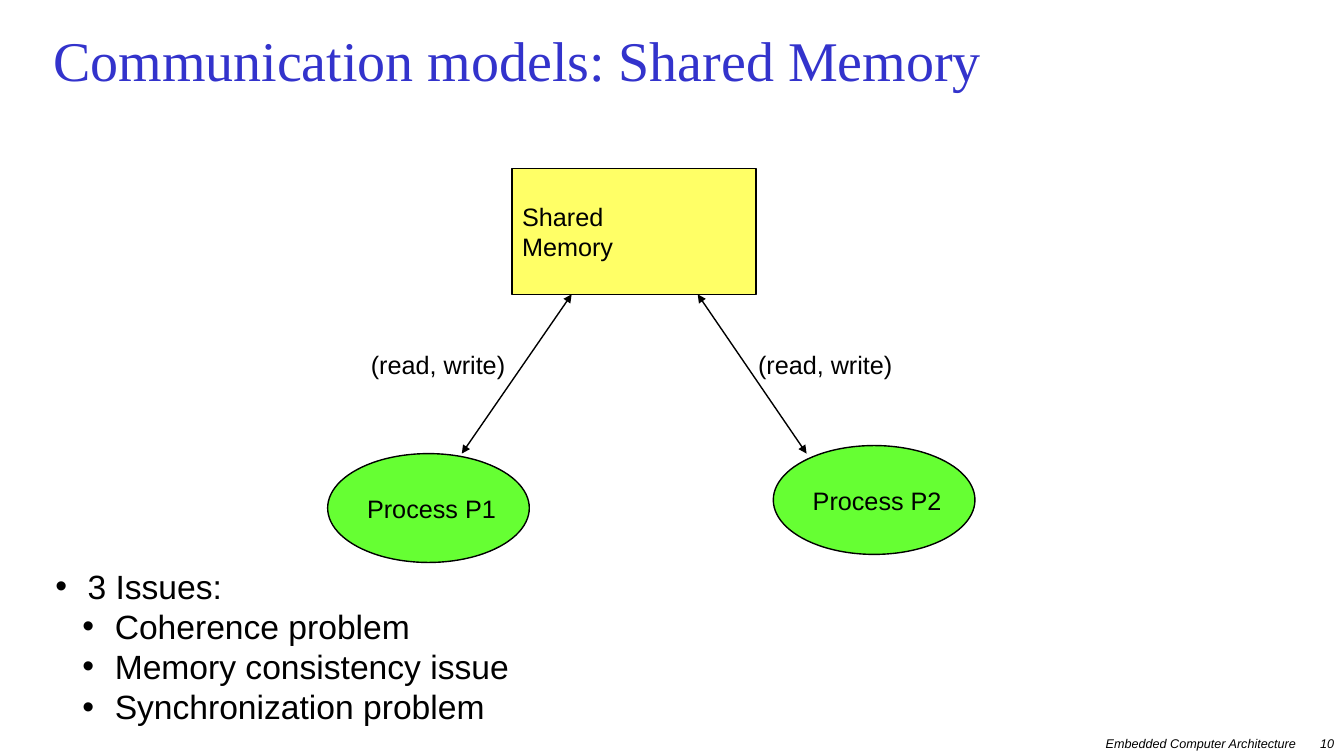
from pptx import Presentation
from pptx.dml.color import RGBColor
from pptx.enum.shapes import MSO_CONNECTOR, MSO_SHAPE
from pptx.enum.text import MSO_ANCHOR, PP_ALIGN
from pptx.oxml.ns import qn
from pptx.util import Inches, Pt
from lxml.etree import SubElement

BLACK = RGBColor(0x00, 0x00, 0x00)
TITLE_BLUE = RGBColor(0x33, 0x33, 0xCC)
PROCESS_GREEN = RGBColor(0x66, 0xFF, 0x33)
MEMORY_YELLOW = RGBColor(0xFF, 0xFF, 0x66)


def write_text(shape, lines, size=18, font="Arial", color=BLACK, italic=False,
               align=PP_ALIGN.LEFT, anchor=MSO_ANCHOR.TOP, wrap=False, spacing=None):
    """Fill a shape with one paragraph per line and return the paragraphs."""
    frame = shape.text_frame
    frame.word_wrap = wrap
    frame.vertical_anchor = anchor
    frame.text = "\n".join(lines)
    for paragraph in frame.paragraphs:
        paragraph.alignment = align
        paragraph.line_spacing = spacing
        paragraph.font.size = Pt(size)
        paragraph.font.name = font
        paragraph.font.color.rgb = color
        paragraph.font.italic = italic
    return frame.paragraphs


def add_text(slide, box, lines, **text_format):
    """Add a text box at (left, top, width, height) in inches."""
    shape = slide.shapes.add_textbox(*map(Inches, box))
    return write_text(shape, lines, **text_format)


def add_node(slide, kind, box, lines, fill):
    """Add an outlined, filled diagram node with its label."""
    shape = slide.shapes.add_shape(kind, *map(Inches, box))
    shape.shadow.inherit = False
    shape.fill.solid()
    shape.fill.fore_color.rgb = fill
    shape.line.color.rgb = BLACK
    shape.line.width = Pt(1)
    write_text(shape, lines, anchor=MSO_ANCHOR.MIDDLE)


def add_double_arrow(slide, start, end):
    """Draw a straight line with a triangle at both ends."""
    arrow = slide.shapes.add_connector(MSO_CONNECTOR.STRAIGHT, *map(Inches, start + end))
    arrow.line.color.rgb = BLACK
    arrow.line.width = Pt(1)
    line = arrow.line._get_or_add_ln()
    for tag in ("a:headEnd", "a:tailEnd"):
        SubElement(line, qn(tag), type="triangle")
    SubElement(arrow._element.spPr, qn("a:effectLst"))


def add_diagram(slide, left, top):
    """Draw the memory, both processes and the arrows between them."""
    add_node(slide, MSO_SHAPE.RECTANGLE, (left + 1.83, top, 2.42, 1.25),
             ["Shared", "Memory"], MEMORY_YELLOW)
    processes = [("Process P1", 0, 2.83, 1.33, 2.42, 0.33),
                 ("Process P2", 4.42, 2.75, 4.75, 3.67, 4.17)]
    for name, x, y, arrow_x, memory_x, label_x in processes:
        add_node(slide, MSO_SHAPE.OVAL, (left + x, top + y, 2, 1.08), [name], PROCESS_GREEN)
        add_double_arrow(slide, (left + arrow_x, top + 2.83), (left + memory_x, top + 1.25))
        add_text(slide, (left + label_x, top + 1.75, 1.6, 0.4), ["(read, write)"])


def add_issues(slide, box):
    """List the issues, the first line as the heading of the others."""
    lines = ["3 Issues:", "Coherence problem", "Memory consistency issue",
             "Synchronization problem"]
    for index, paragraph in enumerate(add_text(slide, box, lines, size=24)):
        paragraph.level = min(index, 1)
        properties = paragraph._p.get_or_add_pPr()
        properties.set("marL", str(Inches(0.32 + 0.27 * paragraph.level)))
        properties.set("indent", str(Inches(-0.32)))
        for tag, attributes in (("a:buFont", {"typeface": "Arial"}),
                                ("a:buChar", {"char": "•"})):
            bullet = properties.makeelement(qn(tag), attributes)
            properties.insert_element_before(bullet, "a:tabLst", "a:defRPr", "a:extLst")


def add_footer(slide, right, top):
    """Place the course name and the page number at the right edge."""
    number_width, name_width = 0.38, 3.45
    footer = dict(size=9, italic=True, align=PP_ALIGN.RIGHT, wrap=True)
    add_text(slide, (right - number_width - name_width, top, name_width, 0.25),
             ["Embedded Computer Architecture"], **footer)
    add_text(slide, (right - number_width, top, number_width, 0.25), ["10"], **footer)


def main():
    """Build and save the shared memory slide."""
    presentation = Presentation()
    presentation.slide_width = Inches(13.33)
    presentation.slide_height = Inches(7.5)
    slide = presentation.slides.add_slide(presentation.slide_layouts[6])
    add_text(slide, (0.43, 0.25, 12.46, 0.8), ["Communication models: Shared Memory"],
             size=40, font="Times New Roman", color=TITLE_BLUE,
             anchor=MSO_ANCHOR.MIDDLE, wrap=True, spacing=0.8)
    add_diagram(slide, 3.25, 1.67)
    add_issues(slide, (0.45, 5.56, 4.87, 1.72))
    add_footer(slide, 13.33, 7.25)
    presentation.save("out.pptx")


if __name__ == "__main__":
    main()
